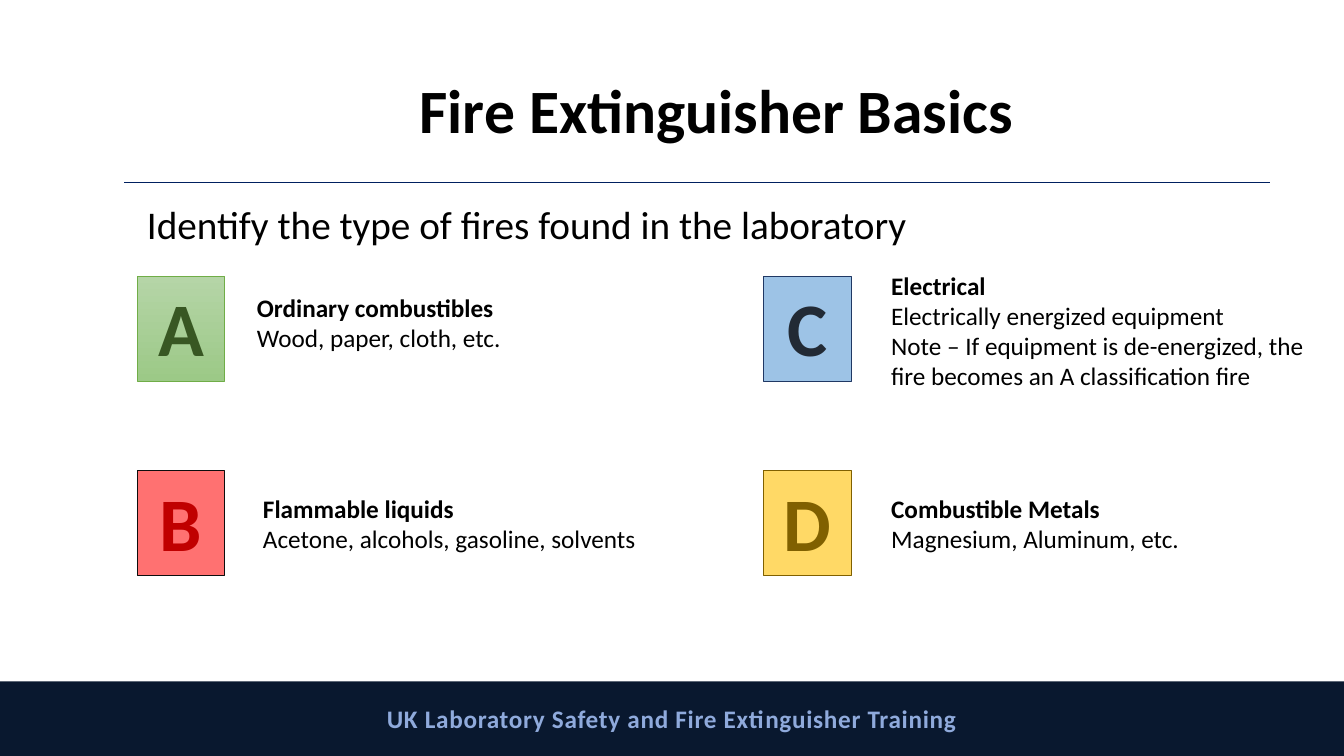
from lxml import etree
from pptx import Presentation
from pptx.dml.color import RGBColor
from pptx.enum.shapes import MSO_CONNECTOR, MSO_SHAPE
from pptx.enum.text import MSO_ANCHOR, PP_ALIGN
from pptx.oxml.ns import qn
from pptx.util import Inches, Pt

RECTANGLE = MSO_SHAPE.RECTANGLE
STRAIGHT = MSO_CONNECTOR.STRAIGHT
TOP, MIDDLE = MSO_ANCHOR.TOP, MSO_ANCHOR.MIDDLE
LEFT, CENTER = PP_ALIGN.LEFT, PP_ALIGN.CENTER

FONT = "Calibri"
BLACK = RGBColor(0x00, 0x00, 0x00)
NAVY = RGBColor(0x00, 0x20, 0x60)
FOOTER_FILL = RGBColor(0x09, 0x18, 0x2F)
FOOTER_TEXT = RGBColor(0x8F, 0xAA, 0xDC)
GREEN_LIGHT = RGBColor(0xB5, 0xD5, 0xA7)
GREEN_MEDIUM = RGBColor(0x9C, 0xC9, 0x87)
GREEN_LINE = RGBColor(0x70, 0xAD, 0x47)
GREEN_DARK = RGBColor(0x38, 0x57, 0x23)
RED_LIGHT = RGBColor(0xFF, 0x71, 0x71)
RED_DARK = RGBColor(0xC0, 0x00, 0x00)
NEAR_BLACK = RGBColor(0x0D, 0x0D, 0x0D)
BLUE_LIGHT = RGBColor(0x9D, 0xC3, 0xE6)
BLUE_LINE = RGBColor(0x20, 0x38, 0x64)
SLATE = RGBColor(0x22, 0x2A, 0x35)
GOLD = RGBColor(0xFF, 0xD9, 0x66)
GOLD_DARK = RGBColor(0x80, 0x60, 0x00)

TILE_LEFTS = (1.36, 7.57)
TILE_TOPS = (2.74, 4.67)

FIRE_CLASSES = [
    ("A", 0, 0, (GREEN_LIGHT, GREEN_MEDIUM), GREEN_LINE, GREEN_DARK, (2.45, 2.85, 0.71),
     ["Ordinary combustibles", "Wood, paper, cloth, etc."]),
    ("B", 0, 1, (RED_LIGHT,), NEAR_BLACK, RED_DARK, (2.51, 4.84, 0.71),
     ["Flammable liquids", "Acetone, alcohols, gasoline, solvents"]),
    ("C", 1, 0, (BLUE_LIGHT,), BLUE_LINE, SLATE, (8.74, 2.63, 1.31),
     ["Electrical", "Electrically energized equipment",
      "Note – If equipment is de-energized, the fire becomes an A classification fire"]),
    ("D", 1, 1, (GOLD,), GOLD_DARK, GOLD_DARK, (8.74, 4.84, 0.71),
     ["Combustible Metals", "Magnesium, Aluminum, etc."]),
]


def add_span(para, text, size, color, bold=False):
    span = para.add_run()
    span.text = text
    span.font.name = FONT
    span.font.size = Pt(size)
    span.font.bold = bold
    span.font.color.rgb = color
    return span


def add_text(page, left, top, width, height, lines, size, bold_first=True,
             align=LEFT, anchor=TOP, spacing=1.0):
    box = page.shapes.add_textbox(Inches(left), Inches(top), Inches(width), Inches(height))
    frame = box.text_frame
    frame.word_wrap = True
    frame.vertical_anchor = anchor
    for index, line in enumerate(lines):
        para = frame.paragraphs[0] if index == 0 else frame.add_paragraph()
        para.alignment = align
        para.line_spacing = spacing
        add_span(para, line, size, BLACK, bold_first and index == 0)


def add_block(page, left, top, width, height, fills, line, text, size, color, anchor):
    block = page.shapes.add_shape(
        RECTANGLE, Inches(left), Inches(top), Inches(width), Inches(height))
    block.shadow.inherit = False
    if len(fills) > 1:
        block.fill.gradient()
        block.fill.gradient_angle = 270
        for stop, shade in zip(block.fill.gradient_stops, fills):
            stop.color.rgb = shade
    else:
        block.fill.solid()
        block.fill.fore_color.rgb = fills[0]
    if line is None:
        block.line.fill.background()
    else:
        block.line.color.rgb = line
        block.line.width = Pt(0.5)
    block.text_frame.vertical_anchor = anchor
    para = block.text_frame.paragraphs[0]
    para.alignment = CENTER
    return add_span(para, text, size, color, True)


def outline_white(span):
    properties = span._r.get_or_add_rPr()
    outline = etree.Element(qn("a:ln"), w=str(Pt(0.75)))
    fill = etree.SubElement(outline, qn("a:solidFill"))
    etree.SubElement(fill, qn("a:srgbClr"), val="FFFFFF")
    properties.insert(0, outline)


def add_rule(page, left, right, top):
    rule = page.shapes.add_connector(
        STRAIGHT, Inches(left), Inches(top), Inches(right), Inches(top))
    rule.line.color.rgb = NAVY
    rule.line.width = Pt(0.5)
    etree.SubElement(rule._element.spPr, qn("a:effectLst"))


def add_fire_class(page, letter, column, row, fills, line, color, place, lines):
    span = add_block(page, TILE_LEFTS[column], TILE_TOPS[row], 0.87, 1.04,
                     fills, line, letter, 54, color, TOP)
    outline_white(span)
    left, top, height = place
    add_text(page, left, top, 4.59, height, lines, 18)


def main():
    deck = Presentation()
    deck.slide_width = Inches(13.33)
    deck.slide_height = Inches(7.5)
    page = deck.slides.add_slide(deck.slide_layouts[6])
    footer = add_block(page, 0, 6.76, 13.33, 0.74, (FOOTER_FILL,), None,
                       "UK Laboratory Safety and Fire Extinguisher Training",
                       18, FOOTER_TEXT, MIDDLE)
    footer._r.get_or_add_rPr().set("spc", "50")
    add_text(page, 1.36, 0.4, 11.5, 1.45, ["Fire Extinguisher Basics"], 44,
             align=CENTER, anchor=MIDDLE, spacing=0.9)
    add_text(page, 1.36, 1.99, 8, 0.61,
             ["Identify the type of fires found in the laboratory"], 28,
             bold_first=False, spacing=0.9)
    add_rule(page, 1.23, 12.6, 1.81)
    for fire_class in FIRE_CLASSES:
        add_fire_class(page, *fire_class)
    deck.save("out.pptx")


if __name__ == "__main__":
    main()
